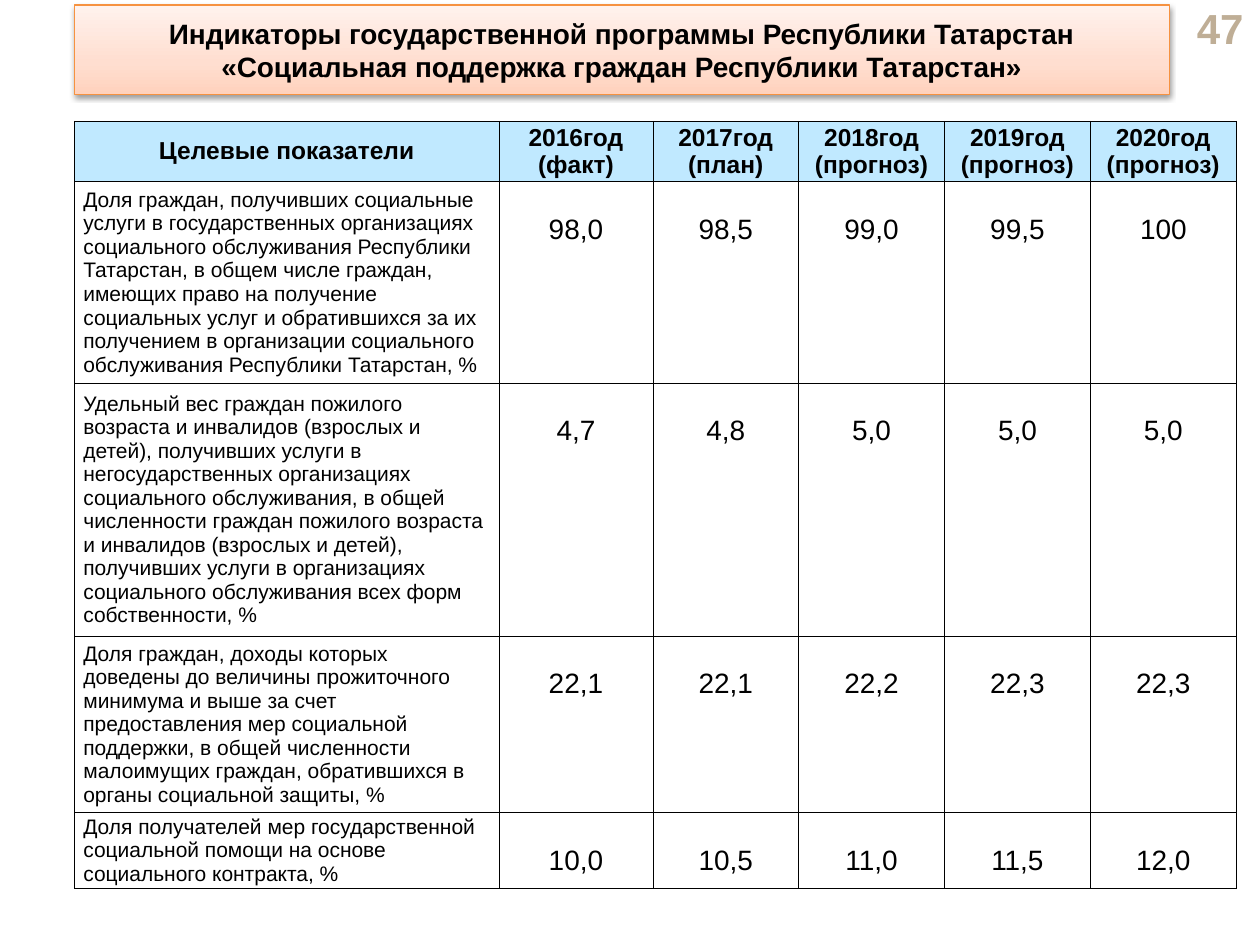
from lxml import etree
from pptx import Presentation
from pptx.dml.color import RGBColor
from pptx.enum.text import MSO_ANCHOR, MSO_AUTO_SIZE, PP_ALIGN
from pptx.oxml import parse_xml
from pptx.oxml.ns import qn
from pptx.util import Cm, Pt

LEFT, CENTER, RIGHT = PP_ALIGN.LEFT, PP_ALIGN.CENTER, PP_ALIGN.RIGHT
TOP, MIDDLE = MSO_ANCHOR.TOP, MSO_ANCHOR.MIDDLE
NO_AUTOFIT = MSO_AUTO_SIZE.NONE
NAMESPACE = 'xmlns:a="http://schemas.openxmlformats.org/drawingml/2006/main"'
FONT = "Arial"
COLORS = {
    "text": "000000",
    "page_number": "BFAE96",
    "header": "C0E9FF",
    "cell": "FFFFFF",
    "border": "000000",
    "title_line": "F69240",
}
TITLE_GRADIENT = [(0, "FFD2BD"), (35, "FFDED0"), (100, "FFF2ED")]
TITLE = (
    "Индикаторы государственной программы Республики Татарстан\v"
    "«Социальная поддержка граждан Республики Татарстан»"
)
YEARS = [
    "2016год (факт)",
    "2017год (план)",
    "2018год (прогноз)",
    "2019год (прогноз)",
    "2020год (прогноз)",
]
INDICATORS = [
    (
        "Доля граждан, получивших социальные услуги в государственных организациях "
        "социального обслуживания Республики Татарстан, в общем числе граждан, "
        "имеющих право на получение социальных услуг и обратившихся за их получением "
        "в организации социального обслуживания Республики Татарстан, %",
        ["98,0", "98,5", "99,0", "99,5", "100"],
    ),
    (
        "Удельный вес граждан пожилого возраста и инвалидов (взрослых и детей), "
        "получивших услуги в негосударственных организациях социального обслуживания, "
        "в общей численности граждан пожилого возраста и инвалидов (взрослых и детей), "
        "получивших услуги в организациях социального обслуживания всех форм "
        "собственности, %",
        ["4,7", "4,8", "5,0", "5,0", "5,0"],
    ),
    (
        "Доля граждан, доходы которых доведены до величины прожиточного минимума и "
        "выше за счет предоставления мер социальной поддержки, в общей численности "
        "малоимущих граждан, обратившихся в органы социальной защиты, %",
        ["22,1", "22,1", "22,2", "22,3", "22,3"],
    ),
    (
        "Доля получателей мер государственной социальной помощи на основе "
        "социального контракта, %",
        ["10,0", "10,5", "11,0", "11,5", "12,0"],
    ),
]
COLUMN_WIDTHS = [8.56, 3.1] + [2.94] * 4
ROW_HEIGHTS = [1.22, 4.05, 5.1, 3.55, 1.53]


def rgb(name):
    return RGBColor.from_string(COLORS[name])


def write_text(text_frame, text, size, bold=False, color="text", align=CENTER):
    text_frame.text = text
    paragraph = text_frame.paragraphs[0]
    paragraph.alignment = align
    paragraph.line_spacing = 1.0
    for run in paragraph.runs:
        run.font.name = FONT
        run.font.size = Pt(size)
        run.font.bold = bold
        run.font.color.rgb = rgb(color)


def place(shape, left, top, width, height):
    shape.left, shape.top = Cm(left), Cm(top)
    shape.width, shape.height = Cm(width), Cm(height)


def add_title(slide):
    title = slide.shapes.title
    place(title, 1.5, 0.1, 22.07, 1.8)
    write_text(title.text_frame, TITLE, 16, bold=True)
    title.text_frame.auto_size = NO_AUTOFIT
    title.text_frame.word_wrap = True
    title.text_frame.vertical_anchor = MIDDLE
    stops = "".join(
        f'<a:gs pos="{position * 1000}"><a:srgbClr val="{color}"/></a:gs>'
        for position, color in TITLE_GRADIENT
    )
    properties = title.element.spPr
    for fragment in (
        f'<a:prstGeom {NAMESPACE} prst="roundRect"><a:avLst/></a:prstGeom>',
        f'<a:gradFill {NAMESPACE} rotWithShape="1"><a:gsLst>{stops}</a:gsLst>'
        '<a:lin ang="16200000" scaled="0"/></a:gradFill>',
    ):
        properties.append(parse_xml(fragment))
    title.line.color.rgb = rgb("title_line")
    title.line.width = Pt(0.75)
    properties.append(parse_xml(
        f'<a:effectLst {NAMESPACE}><a:outerShdw blurRad="39370" dist="20320" '
        'dir="5400000" rotWithShape="0"><a:srgbClr val="000000">'
        '<a:alpha val="38000"/></a:srgbClr></a:outerShdw></a:effectLst>'
    ))


def add_page_number(slide):
    box = slide.shapes.add_textbox(Cm(23.14), Cm(0.13), Cm(2.18), Cm(0.86))
    write_text(box.text_frame, "47", 24, bold=True, color="page_number", align=RIGHT)
    box.text_frame.word_wrap = True
    box.text_frame.vertical_anchor = MIDDLE


def set_borders(cell):
    properties = cell._tc.get_or_add_tcPr()
    for index, side in enumerate(("lnL", "lnR", "lnT", "lnB")):
        line = etree.Element(qn(f"a:{side}"), w=str(Pt(0.25)))
        fill = etree.SubElement(line, qn("a:solidFill"))
        etree.SubElement(fill, qn("a:srgbClr"), val=COLORS["border"])
        properties.insert(index, line)


def fill_cell(cell, text, size, fill="cell", anchor=MIDDLE, top_margin=0, **text_format):
    cell.margin_left = cell.margin_right = Cm(0.18)
    cell.margin_top, cell.margin_bottom = Cm(top_margin), Cm(0)
    cell.vertical_anchor = anchor
    cell.fill.solid()
    cell.fill.fore_color.rgb = rgb(fill)
    write_text(cell.text_frame, text, size, **text_format)
    set_borders(cell)


def add_indicator_table(slide):
    frame = slide.shapes.add_table(
        len(ROW_HEIGHTS), len(COLUMN_WIDTHS), Cm(1.5), Cm(2.44),
        Cm(sum(COLUMN_WIDTHS)), Cm(sum(ROW_HEIGHTS)),
    )
    table = frame.table
    for column, width in zip(table.columns, COLUMN_WIDTHS):
        column.width = Cm(width)
    for row, height in zip(table.rows, ROW_HEIGHTS):
        row.height = Cm(height)
    for column, label in enumerate(["Целевые показатели"] + YEARS):
        fill_cell(table.cell(0, column), label, 14, fill="header", bold=True)
    for row, (indicator, values) in enumerate(INDICATORS, start=1):
        fill_cell(table.cell(row, 0), indicator, 12, align=LEFT)
        for column, value in enumerate(values, start=1):
            fill_cell(table.cell(row, column), value, 16, anchor=TOP, top_margin=0.65)


def main():
    presentation = Presentation()
    presentation.slide_width, presentation.slide_height = Cm(25.4), Cm(19.05)
    slide = presentation.slides.add_slide(presentation.slide_layouts[5])
    add_page_number(slide)
    add_indicator_table(slide)
    add_title(slide)
    presentation.save("out.pptx")


if __name__ == "__main__":
    main()
